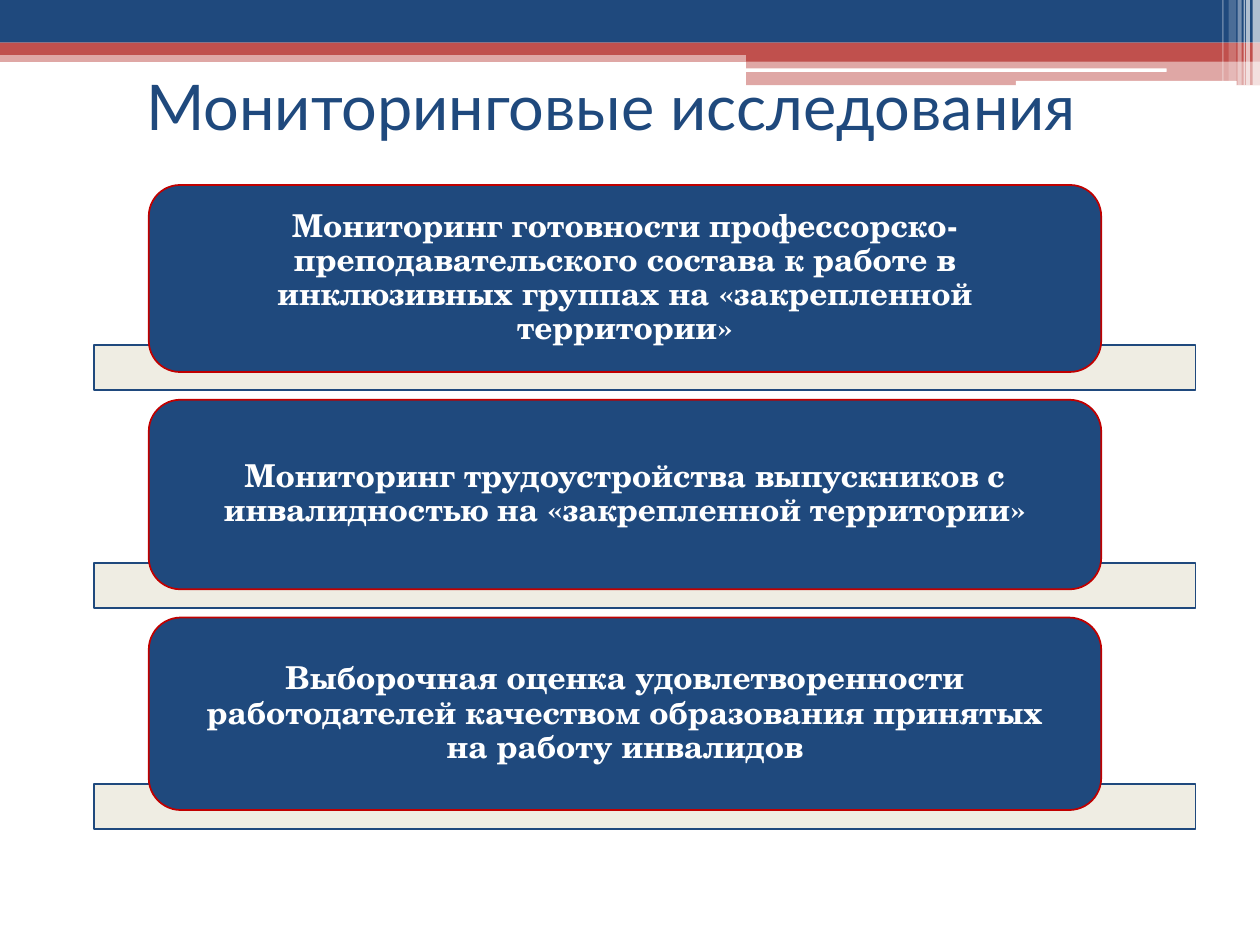
"""Build the slide on monitoring studies: a banner, a title and three topic cards."""

from dataclasses import dataclass

from lxml import etree
from pptx import Presentation
from pptx.dml.color import RGBColor
from pptx.enum.shapes import MSO_SHAPE
from pptx.enum.text import MSO_ANCHOR, PP_ALIGN
from pptx.oxml.ns import qn
from pptx.shapes.autoshape import Shape
from pptx.slide import Slide
from pptx.util import Cm, Pt

RECT = MSO_SHAPE.RECTANGLE
ROUNDED = MSO_SHAPE.ROUNDED_RECTANGLE
MIDDLE = MSO_ANCHOR.MIDDLE
CENTER = PP_ALIGN.CENTER


@dataclass(frozen=True)
class Theme:
    navy: str = "1F497D"
    red: str = "C0504D"
    outline_red: str = "C00000"
    cream: str = "EEECE1"
    white: str = "FFFFFF"
    title_font: str = "Lato"
    card_font: str = "TeX Gyre Schola"
    title_size: float = 36
    card_size: float = 18
    outline: float = 1


@dataclass(frozen=True)
class Block:
    left: float
    top: float
    width: float
    height: float
    fill: str
    opacity: int = 100
    kind: MSO_SHAPE = RECT
    outline: str | None = None


@dataclass(frozen=True)
class Card:
    top: float
    height: float
    bar_top: float
    topic: str


THEME = Theme()
SLIDE_WIDTH, SLIDE_HEIGHT = 25.4, 19.05
BANNER_SPLIT = 15.04
RIGHT_BAND = SLIDE_WIDTH - BANNER_SPLIT

BANNER = (
    Block(0, 1.02, SLIDE_WIDTH, 0.23, THEME.red, 50),
    Block(0, 0, SLIDE_WIDTH, 0.86, THEME.navy),
    Block(0, 0.86, SLIDE_WIDTH, 0.25, THEME.red),
    Block(BANNER_SPLIT, 0.99, RIGHT_BAND, 0.25, THEME.red),
    Block(BANNER_SPLIT, 1.22, RIGHT_BAND, 0.5, THEME.red, 50),
    Block(15.01, 1.38, 8.51, 0.07, THEME.white, kind=ROUNDED),
    Block(20.48, 1.63, 4.45, 0.1, THEME.white, kind=ROUNDED),
    Block(25.25, 0, 0.15, 1.72, THEME.white, 65),
    Block(25.12, 0, 0.08, 1.72, THEME.white, 65),
    Block(25.07, 0, 0.03, 1.72, THEME.white, 60),
    Block(24.95, 0, 0.08, 1.72, THEME.white, 40),
    Block(24.77, 0, 0.15, 1.63, THEME.white, 20),
    Block(24.64, 0, 0.03, 1.63, THEME.white, 30),
)

CARDS = (
    Card(3.73, 3.77, 6.96,
         "Мониторинг готовности профессорско-преподавательского состава "
         "к работе в инклюзивных группах на «закрепленной территории»"),
    Card(8.06, 3.82, 11.35,
         "Мониторинг трудоустройства выпускников с инвалидностью "
         "на «закрепленной территории»"),
    Card(12.45, 3.88, 15.8,
         "Выборочная оценка удовлетворенности работодателей качеством "
         "образования принятых на работу инвалидов"),
)


def draw_block(slide: Slide, block: Block) -> Shape:
    """Draw a filled block with its opacity and optional outline."""
    shape = slide.shapes.add_shape(
        block.kind, Cm(block.left), Cm(block.top), Cm(block.width), Cm(block.height))
    shape.shadow.inherit = False
    shape.fill.solid()
    shape.fill.fore_color.rgb = RGBColor.from_string(block.fill)
    if block.opacity < 100:
        color = shape.fill._xPr.find(f".//{qn('a:srgbClr')}")
        etree.SubElement(color, qn("a:alpha"), val=str(block.opacity * 1000))
    if block.outline:
        shape.line.color.rgb = RGBColor.from_string(block.outline)
        shape.line.width = Pt(THEME.outline)
    else:
        shape.line.fill.background()
    return shape


def write_text(shape: Shape, text: str, *, font: str, size: float, color: str,
               bold: bool = False, spacing: float = 1.0,
               side_inset: float = 0.25, edge_inset: float = 0.13) -> None:
    """Write one centred paragraph in a shape."""
    frame = shape.text_frame
    frame.word_wrap = True
    frame.vertical_anchor = MIDDLE
    frame.margin_left = frame.margin_right = Cm(side_inset)
    frame.margin_top = frame.margin_bottom = Cm(edge_inset)
    paragraph = frame.paragraphs[0]
    paragraph.alignment = CENTER
    paragraph.line_spacing = spacing
    run = paragraph.add_run()
    run.text = text
    run.font.name = font
    run.font.size = Pt(size)
    run.font.bold = bold
    run.font.color.rgb = RGBColor.from_string(color)


def draw_card(slide: Slide, card: Card) -> None:
    """Draw a topic card over its pale bar."""
    draw_block(slide, Block(1.9, card.bar_top, 22.2, 0.91, THEME.cream, 90,
                            outline=THEME.navy))
    panel = draw_block(slide, Block(3, card.top, 19.2, card.height, THEME.navy,
                                    kind=ROUNDED, outline=THEME.outline_red))
    write_text(panel, card.topic, font=THEME.card_font, size=THEME.card_size,
               color=THEME.white, bold=True, spacing=0.9,
               side_inset=0.58, edge_inset=0)


def main() -> None:
    """Build and save the slide."""
    deck = Presentation()
    deck.slide_width, deck.slide_height = Cm(SLIDE_WIDTH), Cm(SLIDE_HEIGHT)
    slide = deck.slides.add_slide(deck.slide_layouts[6])
    for block in BANNER:
        draw_block(slide, block)
    title = slide.shapes.add_textbox(Cm(0.89), Cm(1.32), Cm(22.86), Cm(1.6))
    write_text(title, "Мониторинговые исследования", font=THEME.title_font,
               size=THEME.title_size, color=THEME.navy)
    for card in CARDS:
        draw_card(slide, card)
    deck.save("out.pptx")


if __name__ == "__main__":
    main()
